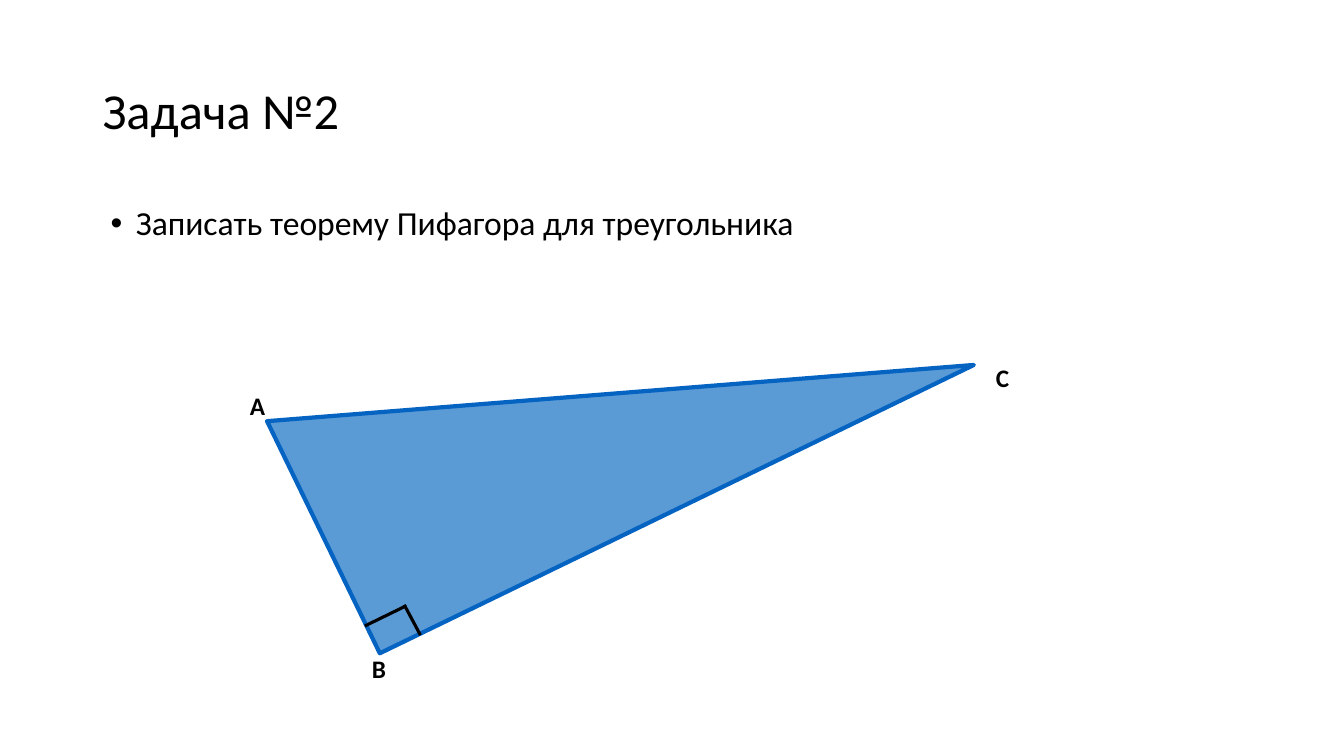
from lxml import etree
from pptx import Presentation
from pptx import util as u
from pptx.dml.color import RGBColor
from pptx.enum import shapes, text
from pptx.oxml.ns import qn

COLORS = {"ink": "000000", "fill": "5B9BD5", "edge": "0563C1", "paper": "FFFFFF"}


class TaskSlide:
    font = "Calibri"

    def __init__(self, deck):
        self.width, self.height = deck.slide_width, deck.slide_height
        self.slide = deck.slides.add_slide(deck.slide_layouts[6])
        self.paint(self.slide.background.fill, "paper")

    def x(self, percent):
        return round(self.width * percent / 100)

    def y(self, percent):
        return round(self.height * percent / 100)

    def area(self, left, top, width, height):
        return self.x(left), self.y(top), self.x(width), self.y(height)

    def paint(self, fill, color):
        fill.solid()
        fill.fore_color.rgb = RGBColor.from_string(COLORS[color])

    def stroke(self, line, color, points):
        self.paint(line.fill, color)
        line.width = u.Pt(points)

    def label(self, words, area, size, bold=False, wrap=True):
        frame = self.slide.shapes.add_textbox(*self.area(*area)).text_frame
        frame.word_wrap = wrap
        paragraph = frame.paragraphs[0]
        paragraph.text = words
        paragraph.font.name = self.font
        paragraph.font.size = u.Pt(size)
        paragraph.font.bold = bold
        paragraph.font.color.rgb = RGBColor.from_string(COLORS["ink"])
        return frame, paragraph

    def title(self, words, area):
        frame, paragraph = self.label(words, area, 36)
        frame.vertical_anchor = text.MSO_ANCHOR.MIDDLE
        paragraph.line_spacing = 0.9

    def bullet(self, words, area):
        paragraph = self.label(words, area, 24)[1]
        paragraph.line_spacing = 0.9
        paragraph.space_before = u.Pt(10)
        properties = paragraph._p.get_or_add_pPr()
        properties.set("marL", str(u.Inches(0.25)))
        properties.set("indent", str(-u.Inches(0.25)))
        bullet_font = etree.Element(qn("a:buFont"), typeface="Arial")
        bullet_mark = etree.Element(qn("a:buChar"), char="•")
        properties.find(qn("a:spcBef")).addnext(bullet_font)
        bullet_font.addnext(bullet_mark)

    def vertex(self, letter, left, top, width, wrap):
        frame = self.label(letter, (left, top, width, 5.33), 18, True, wrap)[0]
        frame.auto_size = text.MSO_AUTO_SIZE.SHAPE_TO_FIT_TEXT

    def right_triangle(self, area, rotation):
        triangle = self.slide.shapes.add_shape(
            shapes.MSO_SHAPE.RIGHT_TRIANGLE, *self.area(*area))
        triangle.rotation = rotation
        triangle.shadow.inherit = False
        self.paint(triangle.fill, "fill")
        self.stroke(triangle.line, "edge", 3)

    def segment(self, x1, y1, x2, y2):
        side = self.slide.shapes.add_connector(
            shapes.MSO_CONNECTOR.STRAIGHT,
            self.x(x1), self.y(y1), self.x(x2), self.y(y2))
        self.stroke(side.line, "ink", 2.25)
        etree.SubElement(side._element.spPr, qn("a:effectLst"))


def main():
    deck = Presentation()
    deck.slide_width, deck.slide_height = u.Inches(13.33), u.Inches(7.5)
    task = TaskSlide(deck)
    task.title("Задача №2", (6.9, 5.33, 86.25, 19.33))
    task.bullet("Записать теорему Пифагора для треугольника",
                (7.5, 26.67, 84.15, 64))
    task.right_triangle((21.6, 34.93, 49.13, 34.13), 334.1)
    for angle_side in ((30.08, 80, 31.28, 84), (27.15, 82.8, 30.23, 80.13)):
        task.segment(*angle_side)
    for letter, left, top, width, wrap in (
            ("А", 17.85, 50.93, 4.58, True),
            ("В", 26.93, 85.73, 2.55, False),
            ("С", 73.35, 47.2, 2.55, False)):
        task.vertex(letter, left, top, width, wrap)
    deck.save("out.pptx")


if __name__ == "__main__":
    main()
